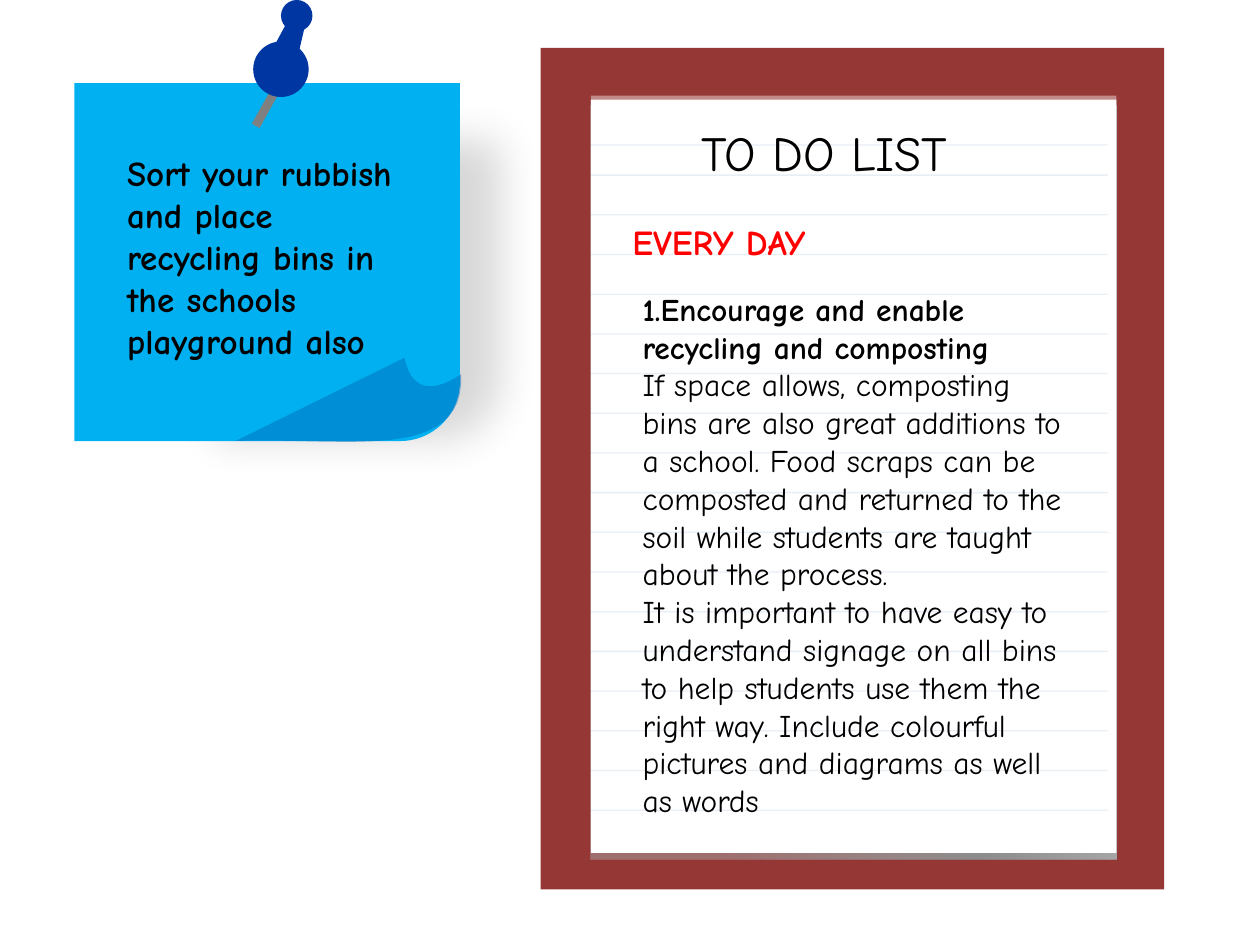
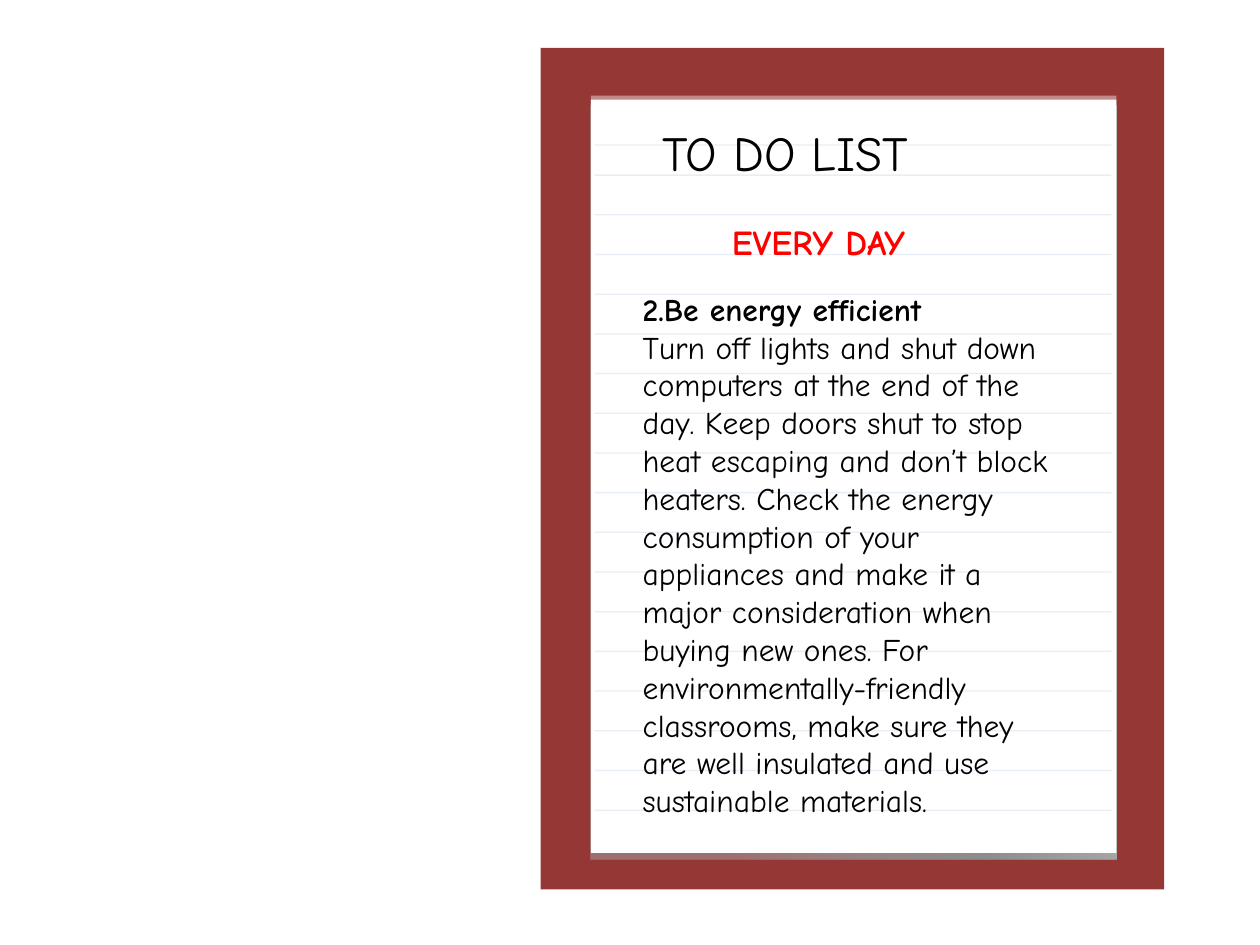
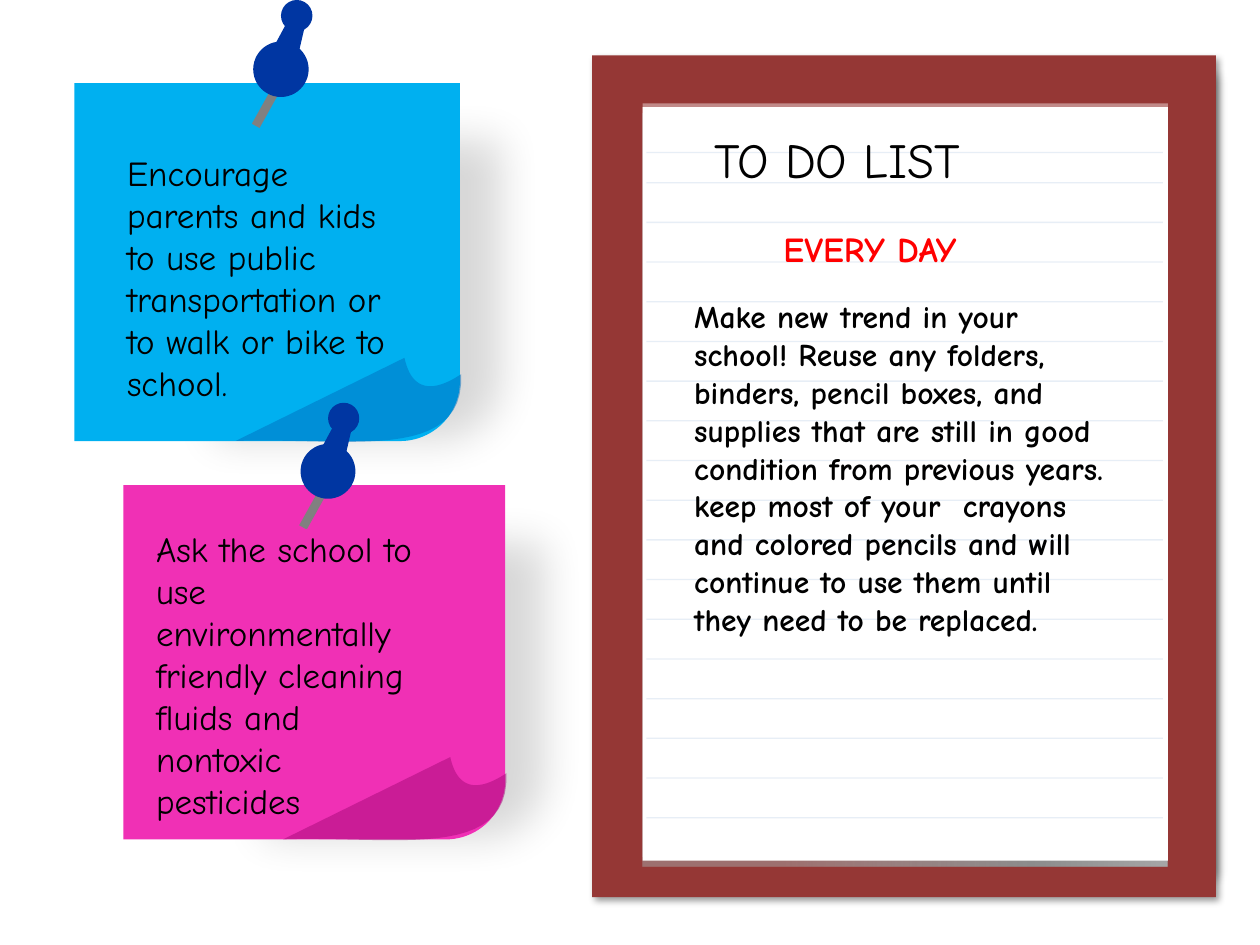
from lxml import etree
from pptx import Presentation
from pptx import util as u
from pptx.dml.color import RGBColor
from pptx.enum import shapes, text
from pptx.oxml.ns import qn

FONT = "Comic Neue"
BLACK = RGBColor(0, 0, 0)
WHITE = RGBColor(255, 255, 255)
RED = RGBColor(0xFF, 0, 0)
FRAME_RED = RGBColor(0x95, 0x37, 0x35)
RULE_BLUE = RGBColor(0x4B, 0x7E, 0xBC)
PIN_BLUE = RGBColor(0, 0x36, 0xA2)
NOTE_BLUE = RGBColor(0, 0xB0, 0xF0)
CURL_BLUE = RGBColor(0, 0x70, 0xC0)
NOTE_PINK = RGBColor(0xF0, 0x30, 0xB5)
CURL_PINK = RGBColor(0xA6, 0x0A, 0x79)
GREY = RGBColor(0x80, 0x80, 0x80)
MID_GREY = RGBColor(0x8C, 0x8C, 0x8C)
LIGHT_GREY = RGBColor(0xA6, 0xA6, 0xA6)

TITLE, HEADING = "TO DO LIST", "EVERY DAY"
RECT = shapes.MSO_SHAPE.RECTANGLE
OVAL = shapes.MSO_SHAPE.OVAL
SNIP = shapes.MSO_SHAPE.SNIP_ROUND_RECTANGLE

# Gradient stops: position in percent, colour, opacity in percent
PAPER_EDGE = [(27, LIGHT_GREY, 51), (74, MID_GREY, 100), (100, LIGHT_GREY, 100)]
PIN_STEEL = [(58, GREY, 100), (100, LIGHT_GREY, 100)]

# Board offsets are from the place the board has on the first slide;
# paragraphs are (words, bold); note text is placed from the note's corner.
SLIDES = [
    {"offset": (0, 0), "rule_left": 4.69, "title_left": 5.47, "heading_left": 4.92,
     "body_height": 4.34,
     "body": [
         ("1.Encourage and enable recycling and composting", True),
         ("If space allows, composting bins are also great additions to a school. "
          "Food scraps can be composted and returned to the soil while students are "
          "taught about the process.", False),
         ("It is important to have easy to understand signage on all bins to help "
          "students use them the right way. Include colourful pictures and diagrams "
          "as well as words", False)],
     "notes": [
         {"corner": (0.59, 0.66), "scale": 1, "colours": (NOTE_BLUE, CURL_BLUE),
          "inset": (0.32, 0.49), "text_size": (2.41, 2.12),
          "text": [("Sort your rubbish and place recycling bins in the schools "
                    "playground also", True)]}]},
    {"offset": (0, 0), "rule_left": 4.72, "title_left": 5.16, "heading_left": 5.71,
     "body_height": 4.04,
     "body": [
         ("2.Be energy efficient", True),
         ("Turn off lights and shut down computers at the end of the day. Keep doors "
          "shut to stop heat escaping and don’t block heaters. Check the energy "
          "consumption of your appliances and make it a major consideration when "
          "buying new ones. For environmentally-friendly classrooms, make sure they "
          "are well insulated and use sustainable materials.", False)],
     "notes": []},
    {"offset": (0.41, 0.06), "rule_left": 4.72, "title_left": 5.16, "heading_left": 5.71,
     "body_height": 3.43, "raised": True,
     "body": [
         ("Make new trend in your school! Reuse any folders, binders, pencil boxes, "
          "and supplies that are still in good condition from previous years. keep "
          "most of your  crayons and colored pencils and will continue to use them "
          "until they need to be replaced.", True)],
     "notes": [
         {"corner": (0.59, 0.66), "scale": 1, "colours": (NOTE_BLUE, CURL_BLUE),
          "inset": (0.32, 0.49), "text_size": (2.41, 2.46),
          "text": [("Encourage parents and kids to use public transportation or to "
                    "walk or bike to school.", False)]},
         {"corner": (0.98, 3.85), "scale": 0.99, "colours": (NOTE_PINK, CURL_PINK),
          "inset": (0.16, 0.29), "text_size": (2.39, 2.12),
          "text": [("Ask the school to use environmentally friendly cleaning fluids "
                    "and nontoxic pesticides", False)]}]},
]

# Board
SHEET_LEFT, SHEET_WIDTH, SHEET_HEIGHT = 4.69, 4.17, 5.98
RULE_WIDTH, RULE_GAP = 4.1, 0.315
RULE_TOPS = [1.15] + [1.39 + RULE_GAP * row for row in range(17)]

# Note outlines, in inches from the note's corner
NECK = [(1.53, -0.19), (1.74, -0.58), (1.85, -0.54), (1.75, -0.11)]
CURL_FOLD = [(3.07, 2.31), (2.86, 2.45), (2.68, 2.46), (2.62, 2.18)]
CURL_EDGE = [(1.28, 2.84), (2.16, 2.81), (3.1, 3.02), (3.07, 2.31)]


def bezier(points, steps=24):
    """Return points along a cubic curve."""
    def at(t):
        weights = ((1 - t) ** 3, 3 * t * (1 - t) ** 2, 3 * t * t * (1 - t), t ** 3)
        return tuple(sum(w * p[axis] for w, p in zip(weights, points)) for axis in (0, 1))
    return [at(step / steps) for step in range(steps + 1)]


def add_node(parent, tag, **attributes):
    node = etree.SubElement(parent, qn(tag))
    for name, value in attributes.items():
        node.set(name, str(value))
    return node


def set_opacity(shape, percent):
    for colour in shape._element.spPr.iter(qn("a:srgbClr")):
        add_node(colour, "a:alpha", val=percent * 1000)


def paint(shape, fill, opacity=100):
    """Fill with a colour, or with a list of gradient stops; no line or shadow."""
    shape.shadow.inherit = False
    shape.line.fill.background()
    if isinstance(fill, RGBColor):
        shape.fill.solid()
        shape.fill.fore_color.rgb = fill
        if opacity < 100:
            set_opacity(shape, opacity)
        return shape
    shape.fill.gradient()
    shape.fill.gradient_angle = 0
    stops = next(shape._element.iter(qn("a:gsLst")))
    for old in list(stops):
        stops.remove(old)
    for position, colour, stop_opacity in fill:
        stop = add_node(stops, "a:gs", pos=position * 1000)
        colour_node = add_node(stop, "a:srgbClr", val=colour)
        add_node(colour_node, "a:alpha", val=stop_opacity * 1000)
    return shape


def effects(shape):
    return shape._element.spPr.find(qn("a:effectLst"))


def soften(shape, points):
    add_node(effects(shape), "a:softEdge", rad=u.Pt(points))


def drop_shadow(shape):
    shadow = add_node(effects(shape), "a:outerShdw", blurRad=u.Pt(4), dist=u.Pt(3),
                      dir=45 * 60000, algn="tl", rotWithShape=0)
    add_node(add_node(shadow, "a:srgbClr", val=BLACK), "a:alpha", val=40000)


def place(shape, left, top, width, height):
    shape.left, shape.top = u.Inches(left), u.Inches(top)
    shape.width, shape.height = u.Inches(width), u.Inches(height)


def add_box(parent, kind, box, fill, opacity=100, rotation=0):
    shape = parent.add_shape(kind, *(u.Inches(length) for length in box))
    shape.rotation = rotation
    return paint(shape, fill, opacity)


def add_outline(parent, points, fill, opacity=100):
    points = [(u.Inches(x), u.Inches(y)) for x, y in points]
    builder = parent.build_freeform(*points[0])
    builder.add_line_segments(points[1:], close=True)
    return paint(builder.convert_to_shape(), fill, opacity)


def write(shape, paragraphs, size, colour=BLACK):
    frame = shape.text_frame
    frame.word_wrap = True
    frame.auto_size = text.MSO_AUTO_SIZE.SHAPE_TO_FIT_TEXT
    frame.vertical_anchor = text.MSO_ANCHOR.TOP
    for index, (words, bold) in enumerate(paragraphs):
        para = frame.add_paragraph() if index else frame.paragraphs[0]
        properties = para._p.get_or_add_pPr()
        properties.set("marL", "0")
        properties.set("indent", "0")
        add_node(properties, "a:buNone")
        para.alignment = text.PP_ALIGN.LEFT
        para.space_before = u.Pt(0)
        span = para.add_run()
        span.text = words
        span.font.name, span.font.size, span.font.bold = FONT, u.Pt(size), bold
        span.font.color.rgb = colour


def add_text(parent, box, paragraphs, size, colour=BLACK):
    shape = parent.add_textbox(*(u.Inches(length) for length in box))
    write(shape, paragraphs, size, colour)


def add_note(page, note):
    """Draw a sticky note with a curled corner, a pin and its words."""
    (left, top), scale = note["corner"], note["scale"]
    paper, curl = note["colours"]
    parent = page.shapes.add_group_shape().shapes

    def spot(x, y):
        return left + x * scale, top + y * scale

    def box(x, y, width, height):
        return *spot(x, y), width * scale, height * scale

    shade = add_box(parent, SNIP, box(0.77, 0.11, 2.95, 3.06), BLACK, 16, 180)
    soften(shade, 25)
    sheet = add_box(parent, SNIP, box(0, 0, 3.06, 2.84), paper, rotation=180)
    for shape in (shade, sheet):
        shape.adjustments[0], shape.adjustments[1] = 0.167, 0
    fold = bezier(CURL_FOLD) + bezier(CURL_EDGE)
    add_outline(parent, [spot(*point) for point in fold], curl, 51)
    add_box(parent, RECT, box(1.56, -0.26, 0.07, 0.64), PIN_STEEL, rotation=29.1)
    add_box(parent, OVAL, box(1.42, -0.33, 0.44, 0.44), PIN_BLUE)
    add_outline(parent, [spot(*point) for point in NECK], PIN_BLUE)
    add_box(parent, OVAL, box(1.64, -0.66, 0.25, 0.25), PIN_BLUE)
    inset_x, inset_y = note["inset"]
    add_text(parent, (left + inset_x, top + inset_y, *note["text_size"]), note["text"], 20)


def add_board(page, content):
    """Draw the framed, ruled sheet with its title, heading and list."""
    dx, dy = content["offset"]
    raised = content.get("raised", False)
    if raised:
        soften(add_box(page.shapes, RECT, (4.84, 0.44, 4.96, 6.69), BLACK, 51), 8)
    frame = add_box(page.shapes, RECT, (4.29 + dx, 0.38 + dy, 4.95, 6.68), FRAME_RED)
    if raised:
        drop_shadow(frame)
    for top, fill, opacity in ((0.76, WHITE, 42), (0.84, PAPER_EDGE, 100), (0.79, WHITE, 100)):
        add_box(page.shapes, RECT, (SHEET_LEFT + dx, top + dy, SHEET_WIDTH, SHEET_HEIGHT),
                fill, opacity)

    start = content["rule_left"] + dx
    for top in RULE_TOPS:
        height = u.Inches(top + dy)
        rule = page.shapes.add_connector(shapes.MSO_CONNECTOR.STRAIGHT, u.Inches(start), height,
                                         u.Inches(start + RULE_WIDTH), height)
        rule.line.width = u.Pt(0.75)
        rule.line.color.rgb = RULE_BLUE
        set_opacity(rule, 13)
        add_node(rule._element.spPr, "a:effectLst")

    title, body = page.shapes.title, page.placeholders[1]
    for shape in (title, body):
        page.shapes._spTree.append(shape._element)
    place(title, content["title_left"] + dx, 0.92 + dy, 3.23, 0.57)
    write(title, [(TITLE, False)], 28)
    add_text(page.shapes, (content["heading_left"] + dx, 1.7 + dy, 2.13, 0.44),
             [(HEADING, True)], 20, RED)
    place(body, 5 + dx, 2.25 + dy, 3.54, content["body_height"])
    write(body, content["body"], 18)


def main():
    deck = Presentation()
    deck.slide_width, deck.slide_height = u.Inches(10), u.Inches(7.5)
    for content in SLIDES:
        page = deck.slides.add_slide(deck.slide_layouts[1])
        add_board(page, content)
        for note in content["notes"]:
            add_note(page, note)
    deck.save("out.pptx")


if __name__ == "__main__":
    main()
